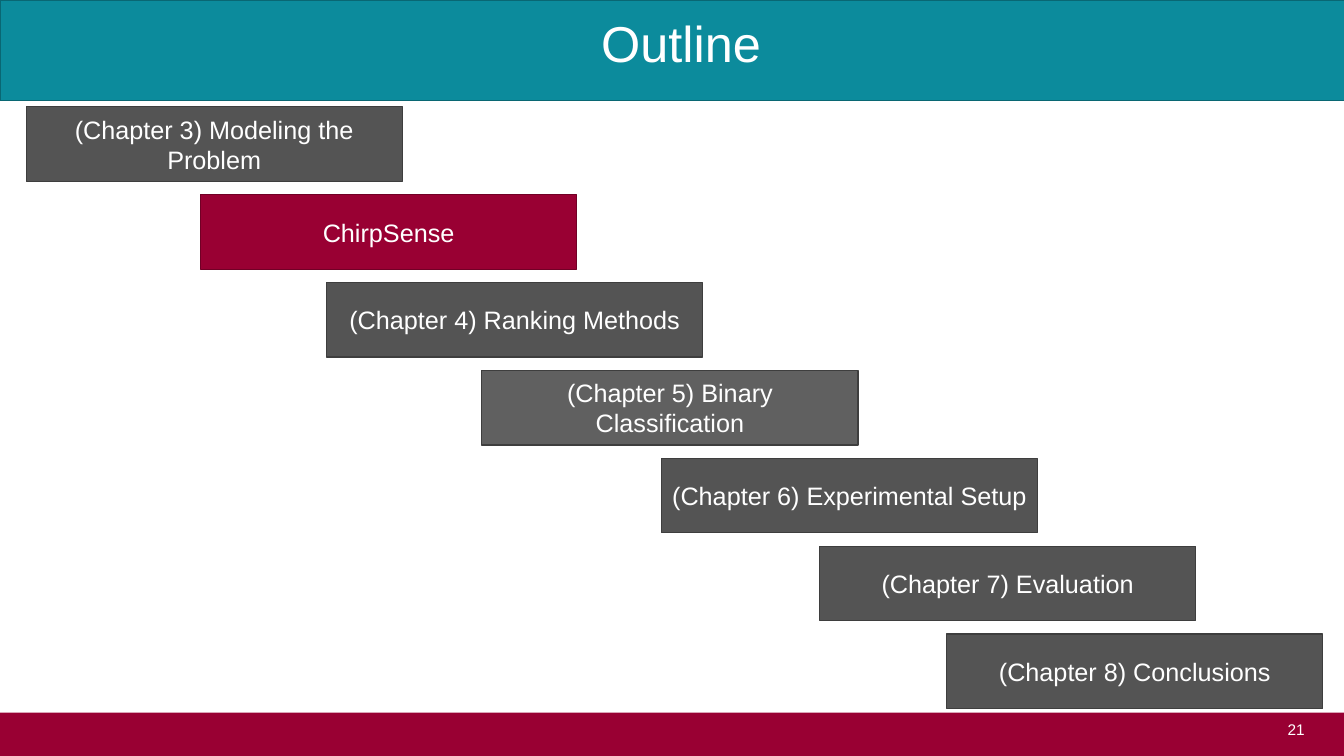
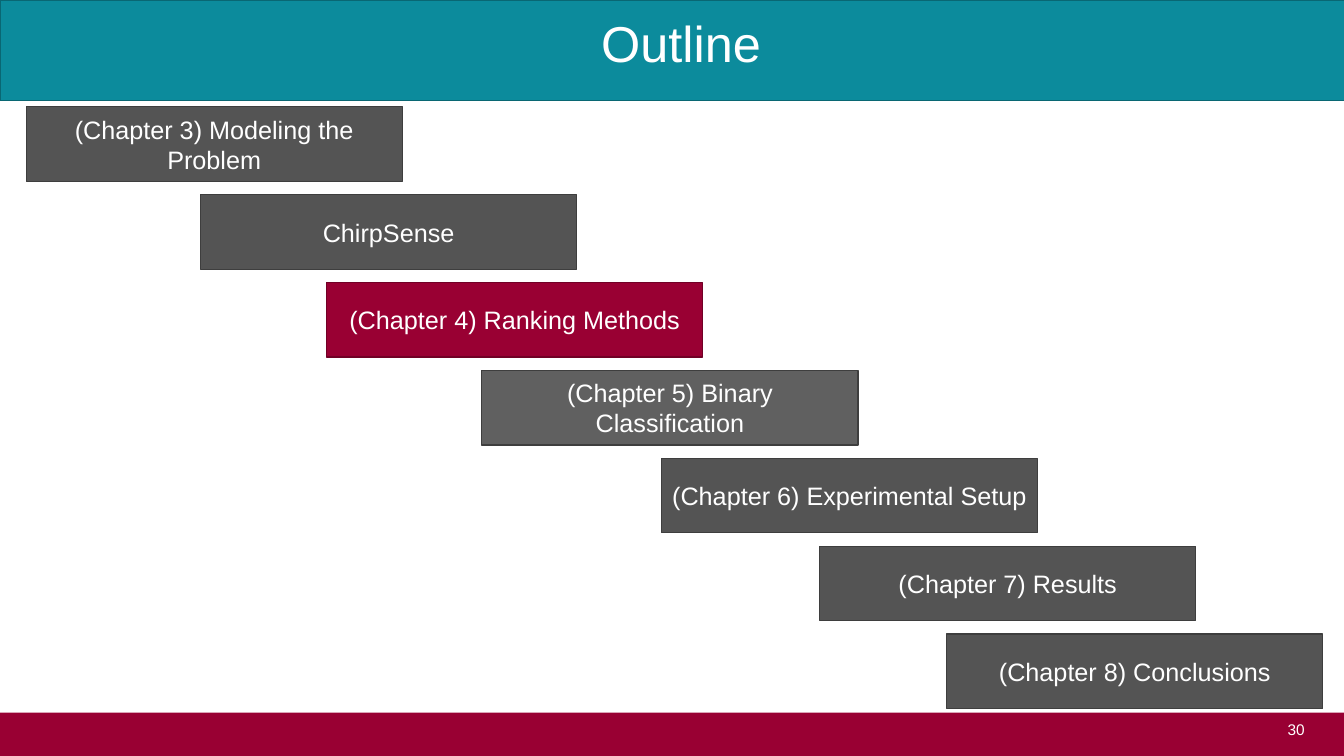
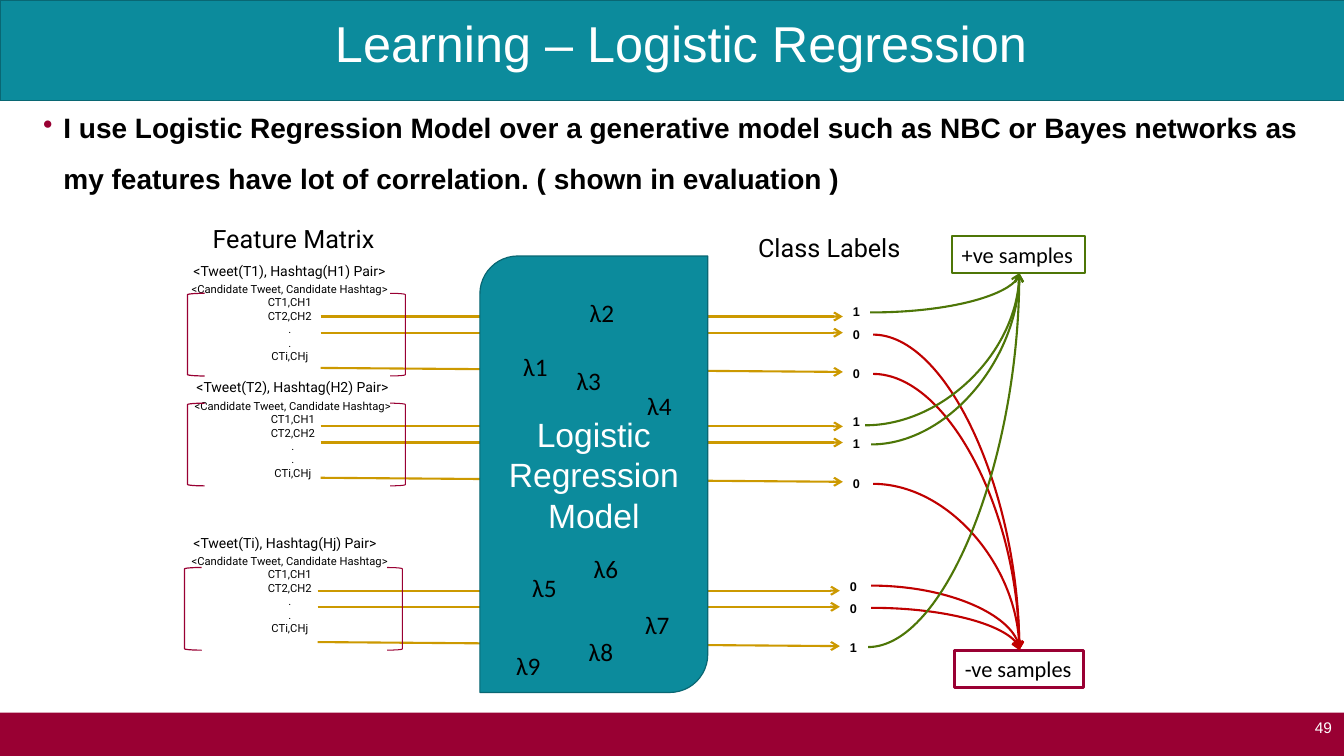
from lxml import etree
from pptx import Presentation
from pptx.dml.color import RGBColor
from pptx.enum.shapes import MSO_CONNECTOR, MSO_SHAPE
from pptx.enum.text import MSO_ANCHOR, PP_ALIGN
from pptx.oxml.ns import qn
from pptx.util import Inches, Pt

LEFT, MID, RIGHT = PP_ALIGN.LEFT, PP_ALIGN.CENTER, PP_ALIGN.RIGHT
TOP, CENTER = MSO_ANCHOR.TOP, MSO_ANCHOR.MIDDLE
RECT, ROUND = MSO_SHAPE.RECTANGLE, MSO_SHAPE.ROUND_2_DIAG_RECTANGLE
OPEN, CLOSE = MSO_SHAPE.LEFT_BRACKET, MSO_SHAPE.RIGHT_BRACKET
LINE, CURVE = MSO_CONNECTOR.STRAIGHT, MSO_CONNECTOR.CURVE

COLORS = {
    "teal": "0C8B9C", "deep": "096773", "maroon": "990033", "wine": "710026",
    "gray": "545454", "light": "606060", "edge": "3E3E3E", "gold": "CC9900",
    "green": "4D7607", "red": "C00000", "white": "FFFFFF", "black": "000000",
}

STEPS = [
    (0.26, "(Chapter 3) Modeling the Problem"),
    (1.99, "ChirpSense"),
    (3.24, "(Chapter 4) Ranking Methods"),
    (4.78, "(Chapter 5) Binary Classification"),
    (6.56, "(Chapter 6) Experimental Setup"),
    (8.13, "(Chapter 7) {}"),
    (9.39, "(Chapter 8) Conclusions"),
]
PALE = 3  # step with the lighter gray

# pair name, text corner, bracket corner, (label, curve start x, y) per row
GROUPS = [
    ("<Tweet(T1), Hashtag(H1) Pair>", (1.75, 2.55), (1.86, 2.91),
     [("1", 8.63, 3.1), ("0", 8.66, 3.32), ("0", 8.66, 3.71)]),
    ("<Tweet(T2), Hashtag(H2) Pair>", (1.78, 3.71), (1.86, 4),
     [("1", 8.58, 4.22), ("1", 8.64, 4.41), ("0", 8.66, 4.8)]),
    ("<Tweet(Ti), Hashtag(Hj) Pair>", (1.75, 5.25), (1.83, 5.63),
     [("0", 8.64, 5.81), ("0", 8.64, 6.03), ("1", 8.61, 6.42)]),
]
ROWS = ["<Candidate Tweet, Candidate Hashtag>", "CT1,CH1", "CT2,CH2", ".", ".",
        "CTi,CHj"]
FLOWS = [(0.23, 0.23, 0.06), (0.39, 0.39, 0.28), (0.74, 0.78, 0.67)]
ENDS = {"1": ("green", 2.71), "0": ("red", 6.45)}
WEIGHTS = [(5.09, 3.44), (5.75, 2.9), (5.62, 3.58), (6.32, 3.82), (5.18, 5.63),
           (5.79, 5.44), (6.3, 6), (5.74, 6.26), (5.02, 6.4)]


def rgb(name):
    return RGBColor.from_string(COLORS[name])


def put(item, vals):
    for key, val in vals.items():
        setattr(item, key, val)


def write(frame, text, size, color="black", font="Arial", bold=False,
          first=True, **form):
    """Fill the first paragraph or add one; form holds paragraph values."""
    par = frame.paragraphs[0] if first else frame.add_paragraph()
    put(par, form)
    run = par.add_run()
    run.text = text
    put(run.font, {"size": Pt(size), "name": font, "bold": bold})
    run.font.color.rgb = rgb(color)
    return par


def label(slide, at, text, size, wrap=True, **form):
    box = slide.shapes.add_textbox(*map(Inches, at))
    box.text_frame.word_wrap = wrap
    write(box.text_frame, text, size, **form)
    return box.text_frame


def block(slide, at, fill=None, edge=None, width=0.85, kind=RECT):
    shape = slide.shapes.add_shape(kind, *map(Inches, at))
    shape.shadow.inherit = False
    if fill:
        shape.fill.solid()
        shape.fill.fore_color.rgb = rgb(fill)
    else:
        shape.fill.background()
    if edge:
        shape.line.color.rgb = rgb(edge)
        shape.line.width = Pt(width)
    else:
        shape.line.fill.background()
    put(shape.text_frame, {"word_wrap": True, "vertical_anchor": CENTER})
    return shape.text_frame


def arrow(slide, start, end, color, kind=LINE):
    link = slide.shapes.add_connector(kind, *map(Inches, start + end))
    link.line.color.rgb = rgb(color)
    link.line.width = Pt(1.5)
    etree.SubElement(link.line._get_or_add_ln(), qn("a:tailEnd"), type="arrow")
    props = link._element.spPr
    etree.SubElement(props, qn("a:effectLst"))
    if kind == CURVE:
        props.find(qn("a:prstGeom")).set("prst", "curvedConnector2")


def start(deck, title, page, spot=(11.37, 7.1)):
    """Add a slide with the shared bands, title and page number."""
    slide = deck.slides.add_slide(deck.slide_layouts[6])
    block(slide, (0, 0, 13.34, 1), "teal", "deep")
    block(slide, (0, 7.07, 13.34, 0.43), "maroon")
    label(slide, (0.43, 0.14, 12.65, 0.73), title, 36, color="white",
          alignment=MID, line_spacing=0.9)
    label(slide, spot + (1.67, 0.4), page, 11, color="white", alignment=RIGHT)
    return slide


def outline(deck, page, active, seventh):
    slide = start(deck, "Outline", page)
    pitch = (6.29 - 1.06) / (len(STEPS) - 1)
    for i, (left, text) in enumerate(STEPS):
        fill, edge = "light" if i == PALE else "gray", "edge"
        if i == active:
            fill, edge = "maroon", "wine"
        frame = block(slide, (left, 1.06 + i * pitch, 3.73, 0.74), fill, edge)
        write(frame, text.format(seventh), 18, "white", alignment=MID)


def point(slide, text):
    frame = label(slide, (0.33, 1.2, 12.89, 0.82), text, 20, bold=True,
                  line_spacing=Pt(36.5))
    put(frame, {"vertical_anchor": CENTER, "margin_bottom": Inches(0.41)})
    props = frame.paragraphs[0]._p.get_or_add_pPr()
    props.set("marL", str(Inches(0.2)))
    props.set("indent", str(Inches(-0.2)))
    tint = etree.SubElement(props, qn("a:buClr"))
    etree.SubElement(tint, qn("a:srgbClr"), val=COLORS["maroon"])
    etree.SubElement(props, qn("a:buChar"), char="•")


def flows(slide, left, top):
    """Draw the three arrows that run from a matrix to its labels."""
    for begin, end, _ in FLOWS:
        arrow(slide, (left + 1.32, top + begin), (left + 6.5, top + end), "gold")


def matrix(slide, name, corner, left, top):
    frame = label(slide, corner + (2.25, 1.11), name, 10, font="Roboto")
    frame.paragraphs[0]._p.get_or_add_pPr().set("marL", str(Inches(0.07)))
    for i, text in enumerate(ROWS):
        write(frame, text, 8, font="Roboto", first=False, alignment=MID,
              space_before=Pt(0 if i else 2.4))
    block(slide, (left, top, 0.17, 0.82), edge="maroon", kind=OPEN)
    block(slide, (left + 2.01, top, 0.15, 0.82), edge="maroon", width=0.75,
          kind=CLOSE)


def classes(slide, left, top, rows):
    for (_, _, drop), (text, x, y) in zip(FLOWS, rows):
        label(slide, (left + 6.5, top + drop, 0.3, 0.25), text, 9, wrap=False,
              bold=True)
        color, end = ENDS[text]
        arrow(slide, (x, y), (10.11, end), color, CURVE)


def sample(slide, at, text, edge, width):
    frame = block(slide, at, "white", edge, width)
    put(frame, {"word_wrap": False, "vertical_anchor": TOP})
    write(frame, text, 16, font="Calibri", alignment=LEFT)


def learning(deck):
    slide = start(deck, "Learning – Logistic Regression", "49", (11.64, 7.08))
    point(slide, "I use Logistic Regression Model over a generative model such "
          "as NBC or Bayes networks as my features have lot of correlation. "
          "( shown in evaluation )")
    for _, _, corner, _ in GROUPS:
        flows(slide, *corner)
    model = block(slide, (4.76, 2.54, 2.26, 4.33), "teal", "deep", kind=ROUND)
    write(model, "Logistic Regression Model", 24, "white", alignment=MID)
    label(slide, (2.01, 2.17, 1.98, 0.4), "Feature Matrix", 18, font="Roboto")
    label(slide, (7.42, 2.26, 1.88, 0.4), "Class Labels", 18, font="Roboto")
    sample(slide, (9.44, 2.34, 1.32, 0.37), "+ve samples", "green", 1.5)
    sample(slide, (9.47, 6.45, 1.28, 0.37), "-ve samples", "maroon", 2.25)
    for name, spot, corner, rows in GROUPS:
        matrix(slide, name, spot, *corner)
        classes(slide, *corner, rows)
    for i, spot in enumerate(WEIGHTS, 1):
        label(slide, spot + (0.45, 0.4), f"λ{i}", 18, wrap=False, font="Calibri")


def main():
    deck = Presentation()
    put(deck, {"slide_width": Inches(13.33), "slide_height": Inches(7.5)})
    outline(deck, "21", 1, "Evaluation")
    outline(deck, "30", 2, "Results")
    learning(deck)
    deck.save("out.pptx")


if __name__ == "__main__":
    main()
